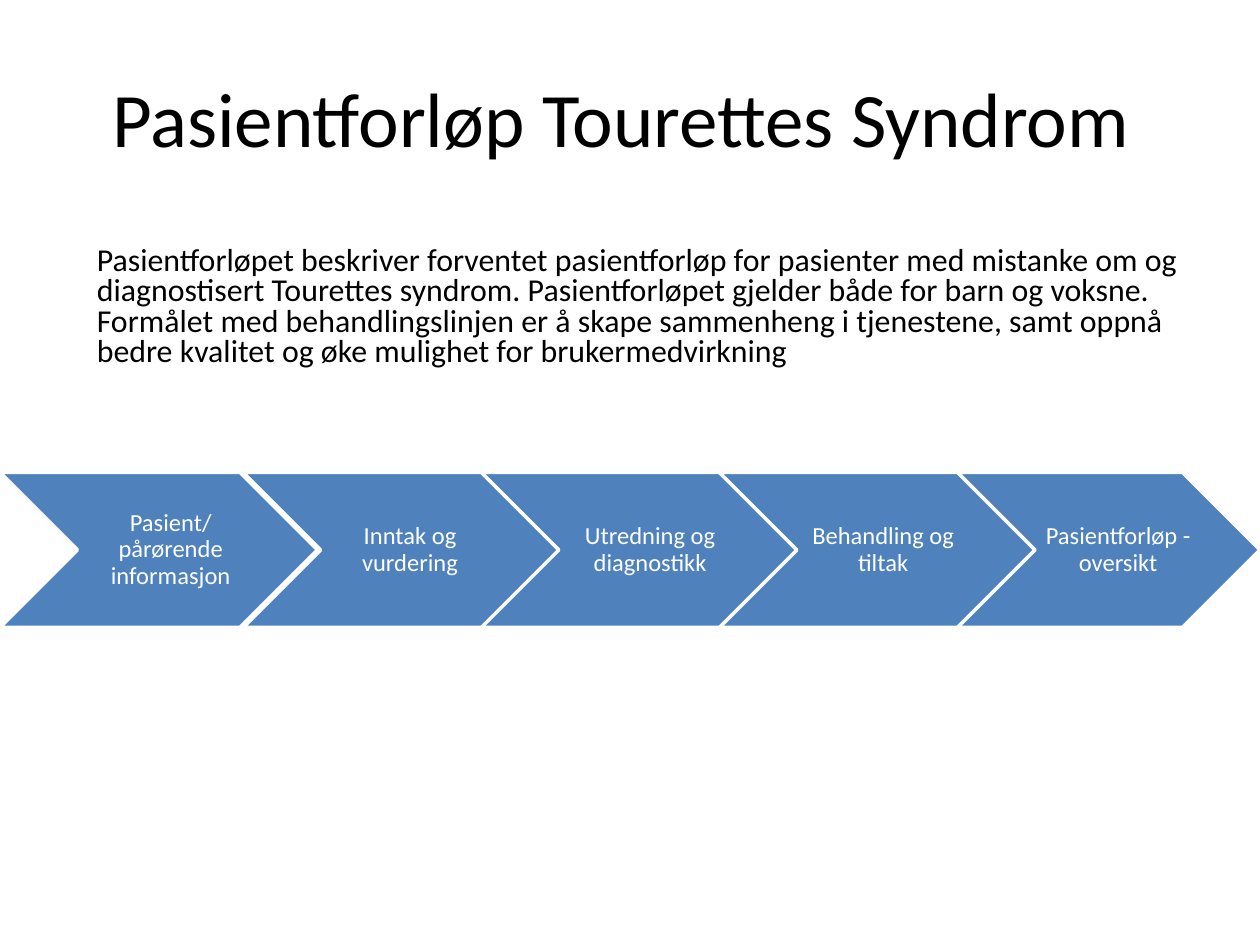
from dataclasses import dataclass

from pptx import Presentation
from pptx.dml.color import RGBColor
from pptx.enum.shapes import MSO_SHAPE
from pptx.enum.text import MSO_ANCHOR, PP_ALIGN
from pptx.util import Inches, Pt


@dataclass(frozen=True)
class Theme:
    font: str = "Calibri"
    text: RGBColor = RGBColor(0x00, 0x00, 0x00)
    light: RGBColor = RGBColor(0xFF, 0xFF, 0xFF)
    step: RGBColor = RGBColor(0x4F, 0x81, 0xBD)
    title_size: float = 44
    body_size: float = 18.2
    label_size: float = 14
    outline: float = 2


THEME = Theme()
SLIDE_WIDTH, SLIDE_HEIGHT = 10, 7.5
ROW_TOP = SLIDE_HEIGHT / 2
ROW_HEIGHT = 1.23
SECOND_STEP_LEFT, STEP_PITCH = 1.93, 1.89
LABEL_INSETS = (0.05, 0.02, 0.02, 0.02)

TITLE = "Pasientforløp Tourettes Syndrom "
INTRODUCTION = (
    "Pasientforløpet beskriver forventet pasientforløp for pasienter med mistanke om og "
    "diagnostisert Tourettes syndrom. Pasientforløpet gjelder både for barn og voksne. "
    "Formålet med behandlingslinjen er å skape sammenheng i tjenestene, samt oppnå "
    "bedre kvalitet og øke mulighet for brukermedvirkning"
)
# Label, chevron width, label offset from the chevron's left, label width
STEPS = [
    ("Pasient/ pårørende informasjon", 2.52, 0.67, 1.34),
    ("Inntak og vurdering", 2.6, 0.53, 1.56),
    ("Utredning og diagnostikk", 2.52, 0.63, 1.39),
    ("Behandling og tiltak", 2.6, 0.52, 1.53),
    ("Pasientforløp - oversikt", 2.4, 0.63, 1.26),
]


def add_text(shapes, text, box, size, color, alignment=PP_ALIGN.CENTER,
             line_spacing=1.0, insets=(0.1, 0.05, 0.1, 0.05)):
    """Add a wrapped, vertically centred text box; insets run left, top, right, bottom."""
    frame = shapes.add_textbox(*map(Inches, box)).text_frame
    frame.word_wrap = True
    frame.vertical_anchor = MSO_ANCHOR.MIDDLE
    (frame.margin_left, frame.margin_top,
     frame.margin_right, frame.margin_bottom) = map(Inches, insets)
    paragraph = frame.paragraphs[0]
    paragraph.alignment = alignment
    paragraph.line_spacing = line_spacing
    run = paragraph.add_run()
    run.text = text
    run.font.name = THEME.font
    run.font.size = Pt(size)
    run.font.color.rgb = color


def add_chevron(shapes, left, width):
    chevron = shapes.add_shape(MSO_SHAPE.CHEVRON, Inches(left), Inches(ROW_TOP),
                               Inches(width), Inches(ROW_HEIGHT))
    chevron.adjustments[0] = 0.5
    chevron.shadow.inherit = False
    chevron.fill.solid()
    chevron.fill.fore_color.rgb = THEME.step
    chevron.line.color.rgb = THEME.light
    chevron.line.width = Pt(THEME.outline)


def add_step(slide, index, label, width, label_offset, label_width):
    """Add one chevron with its label as a group."""
    left = SECOND_STEP_LEFT + (index - 1) * STEP_PITCH if index else 0
    group = slide.shapes.add_group_shape()
    add_chevron(group.shapes, left, width)
    add_text(group.shapes, label, (left + label_offset, ROW_TOP, label_width, ROW_HEIGHT),
             THEME.label_size, THEME.light, line_spacing=0.9, insets=LABEL_INSETS)


def main():
    presentation = Presentation()
    presentation.slide_width = Inches(SLIDE_WIDTH)
    presentation.slide_height = Inches(SLIDE_HEIGHT)
    slide = presentation.slides.add_slide(presentation.slide_layouts[6])

    add_text(slide.shapes, TITLE, (0.5, 0.3, 9, 1.25), THEME.title_size, THEME.text)
    for index, step in enumerate(STEPS):
        add_step(slide, index, *step)
    add_text(slide.shapes, INTRODUCTION, (0.67, 1.78, 9, 1.57), THEME.body_size, THEME.text,
             alignment=PP_ALIGN.LEFT, line_spacing=0.8, insets=(0.1, 0.05, 0.1, 0.29))

    presentation.save("out.pptx")


if __name__ == "__main__":
    main()
